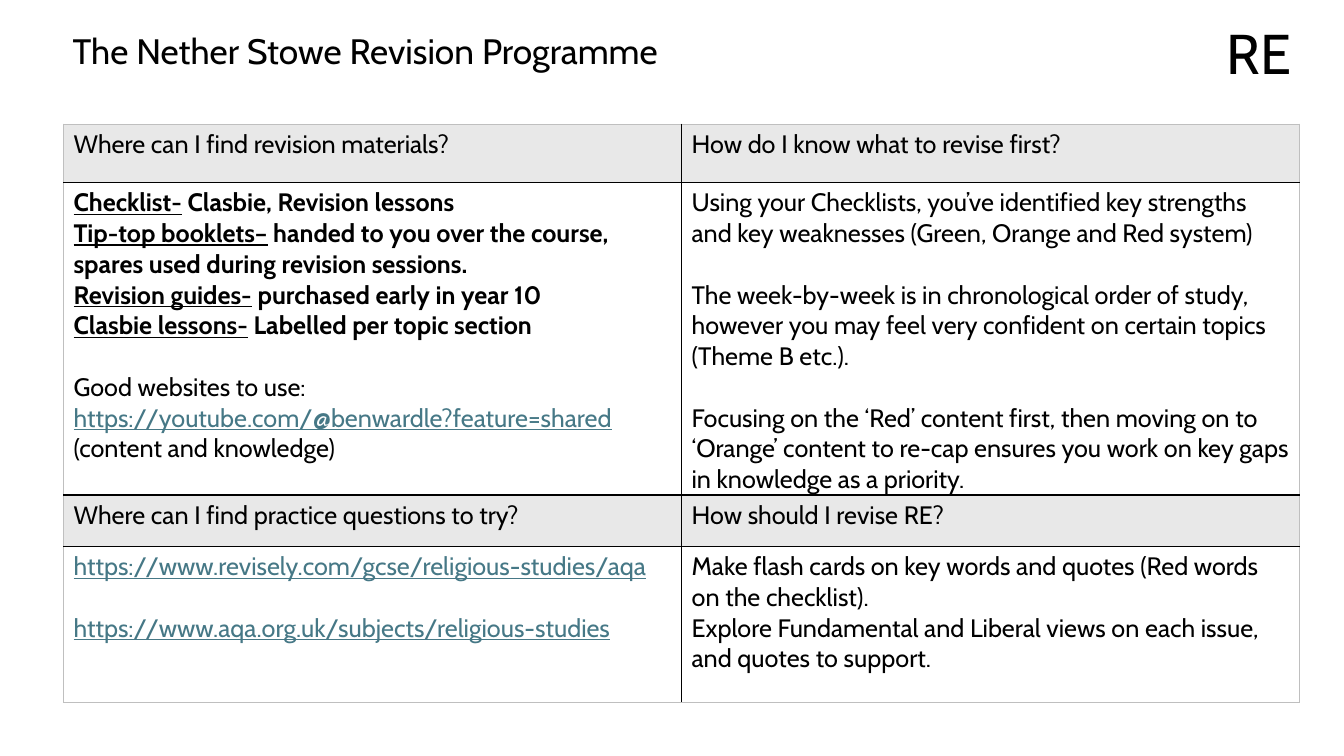
import pptx
import pptx.util
import pptx.dml.color
import pptx.enum.text
from dataclasses import dataclass
from lxml import etree

Inches, Pt = pptx.util.Inches, pptx.util.Pt
RGB = pptx.dml.color.RGBColor.from_string
ALIGN, ANCHOR = pptx.enum.text.PP_ALIGN, pptx.enum.text.MSO_ANCHOR


@dataclass(frozen=True)
class Theme:
    font: str = "Cabin"
    ink: str = "000000"
    link: str = "467886"
    heading_fill: str = "E8E8E8"
    body_fill: str = "FFFFFF"
    outline: str = "BFBFBF"
    title_size: float = 25.2
    subject_size: float = 40
    body_size: float = 18
    paragraph_gap: float = 22


theme = Theme()
STYLES = {
    "plain": {"bold": False, "underline": False},
    "bold": {"bold": True, "underline": False},
    "label": {"bold": True, "underline": True},
    "link": {"bold": False, "underline": True},
}


def add_span(para, text, size, style="plain"):
    span = para.add_run()
    span.text = text
    values = {"name": theme.font, "size": Pt(size), **STYLES[style]}
    for name, value in values.items():
        setattr(span.font, name, value)
    span.font.color.rgb = RGB(theme.link if style == "link" else theme.ink)


def add_border(cell, side, color, width):
    line = etree.SubElement(cell._tc.get_or_add_tcPr(), pptx.oxml.ns.qn(f"a:ln{side}"), w=str(Pt(width)))
    fill = etree.SubElement(line, pptx.oxml.ns.qn("a:solidFill"))
    etree.SubElement(fill, pptx.oxml.ns.qn("a:srgbClr"), val=color)


deck = pptx.Presentation()
deck.slide_width, deck.slide_height = Inches(13.33), Inches(7.5)
page = deck.slides.add_slide(deck.slide_layouts[5])

# Title
title = page.shapes.title
title.left, title.top, title.width, title.height = map(Inches, (0.62, 0.3, 11.5, 0.45))
title.text_frame.vertical_anchor = ANCHOR.MIDDLE
para = title.text_frame.paragraphs[0]
para.alignment, para.line_spacing = ALIGN.LEFT, 0.9
add_span(para, "The Nether Stowe Revision Programme", theme.title_size)

# Subject
subject = page.shapes.add_textbox(*map(Inches, (10.21, 0.13, 2.7, 0.77)))
subject.text_frame.word_wrap = True
para = subject.text_frame.paragraphs[0]
para.alignment = ALIGN.RIGHT
add_span(para, "RE", theme.subject_size)

# Table wording: each cell lists paragraphs as (starts a new block, runs)
rows = [
    [
        [(False, [("Where can I find revision materials?", "plain")])],
        [(False, [("How do I know what to revise first?", "plain")])],
    ],
    [
        [
            (False, [("Checklist-", "label"), (" Clasbie, Revision lessons", "bold")]),
            (False, [("Tip-top booklets–", "label"),
                     (" handed to you over the course, spares used during revision sessions.", "bold")]),
            (False, [("Revision guides-", "label"), (" purchased early in year 10", "bold")]),
            (False, [("Clasbie lessons-", "label"), (" Labelled per topic section", "bold")]),
            (True, [("Good websites to use:", "plain")]),
            (False, [("https://youtube.com/@benwardle?feature=shared", "link"),
                     (" (content and knowledge)", "plain")]),
        ],
        [
            (False, [("Using your Checklists, you’ve identified key strengths and key weaknesses "
                      "(Green, Orange and Red system)", "plain")]),
            (True, [("The week-by-week is in chronological order of study, however you may feel "
                     "very confident on certain topics (Theme B etc.).", "plain")]),
            (True, [("Focusing on the ‘Red’ content first, then moving on to ‘Orange’ content to "
                     "re-cap ensures you work on key gaps in knowledge as a priority.", "plain")]),
        ],
    ],
    [
        [(False, [("Where can I find practice questions to try?", "plain")])],
        [(False, [("How should I revise RE?", "plain")])],
    ],
    [
        [
            (False, [("https://www.revisely.com/gcse/religious-studies/aqa", "link")]),
            (True, [("https://www.aqa.org.uk/subjects/religious-studies", "link")]),
        ],
        [
            (False, [("Make flash cards on key words and quotes (Red words on the checklist).", "plain")]),
            (False, [("Explore Fundamental and Liberal views on each issue, and quotes to support.", "plain")]),
        ],
    ],
]

# Table frame
heights = [0.58, 3.1, 0.51, 1.55]
table = page.shapes.add_table(4, 2, *map(Inches, (0.63, 1.23, 12.26, sum(heights)))).table
table.first_row = table.horz_banding = False
for column in table.columns:
    column.width = Inches(6.13)
for row, height in zip(table.rows, heights):
    row.height = Inches(height)

# Table cells
outer, inner, under_heading = (theme.outline, 0.75), (theme.ink, 1), (theme.ink, 1.5)
levels = [outer, under_heading, inner, inner, outer]
uprights = [outer, inner, outer]
for r, row in enumerate(rows):
    for c, paragraphs in enumerate(row):
        cell = table.cell(r, c)
        cell.margin_left = cell.margin_right = Inches(0.1)
        cell.margin_top, cell.margin_bottom = Inches(0.05), 0
        edges = {"L": uprights[c], "R": uprights[c + 1], "T": levels[r], "B": levels[r + 1]}
        for side, (color, width) in edges.items():
            add_border(cell, side, color, width)
        cell.fill.solid()
        cell.fill.fore_color.rgb = RGB(theme.body_fill if r % 2 else theme.heading_fill)
        for i, (new_block, spans) in enumerate(paragraphs):
            para = cell.text_frame.add_paragraph() if i else cell.text_frame.paragraphs[0]
            if new_block:
                para.space_before = Pt(theme.paragraph_gap)
            for text, style in spans:
                add_span(para, text, theme.body_size, style)

deck.save("out.pptx")
